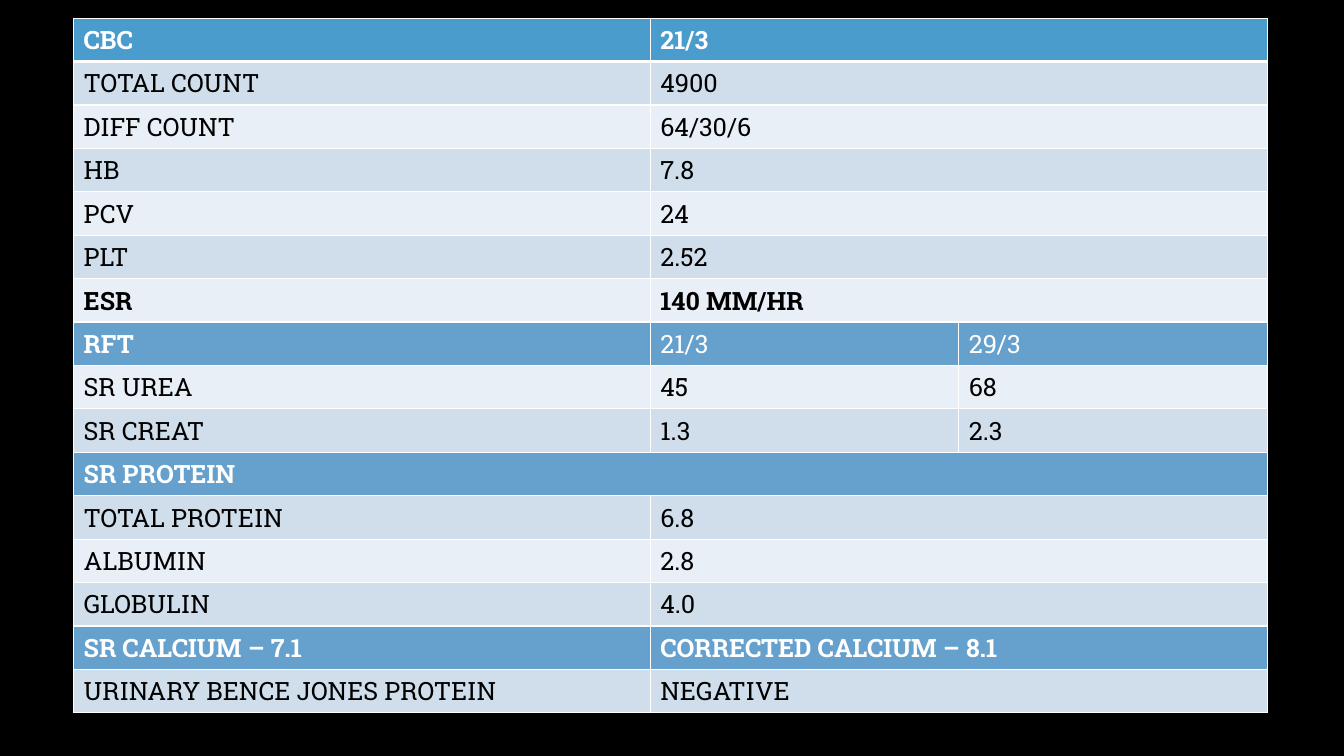
from pptx import Presentation
from pptx.dml.color import RGBColor as Rgb
from pptx.oxml.ns import qn
from pptx.util import Inches, Pt
from lxml.etree import SubElement as Sub

FONT = "Roboto Slab"
WHITE, BLACK = "FFFFFF", "000000"
TOP, HEAD = "4A9CCC", "65A1CC"
BANDS = ["E9EFF6", "D0DEEC"]

ROWS = [
    ("CBC", "21/3"),
    ("TOTAL COUNT", "4900"),
    ("DIFF COUNT", "64/30/6"),
    ("HB", "7.8"),
    ("PCV", "24"),
    ("PLT", "2.52"),
    ("ESR", "140 MM/HR"),
    ("RFT", "21/3", "29/3"),
    ("SR UREA", "45", "68"),
    ("SR CREAT", "1.3", "2.3"),
    ("SR PROTEIN",),
    ("TOTAL PROTEIN", "6.8"),
    ("ALBUMIN", "2.8"),
    ("GLOBULIN", "4.0"),
    ("SR CALCIUM – 7.1", "CORRECTED CALCIUM – 8.1"),
    ("URINARY BENCE JONES PROTEIN", "NEGATIVE"),
]
HEADS = {"CBC", "RFT", "SR PROTEIN", "SR CALCIUM – 7.1"}
BOLD = HEADS | {"ESR"}
LIGHT = {(7, 1), (7, 2)}
WIDTHS = [5.72, 3.06, 3.06]
LEFT, UP, HIGH = 0.73, 0.18, 0.43


def paint(fill, hue):
    fill.solid()
    fill.fore_color.rgb = Rgb.from_string(hue)


def edge(cell, row):
    wide = {"T": 3 if row == 1 else 1, "B": 3 if row == 0 else 1}
    props = cell._tc.get_or_add_tcPr()
    for side in "LRTB":
        line = Sub(props, qn(f"a:ln{side}"), w=str(Pt(wide.get(side, 1))))
        Sub(Sub(line, qn("a:solidFill")), qn("a:srgbClr"), val=WHITE)


def write(cell, text, hue, bold):
    cell.text_frame.text = text
    font = cell.text_frame.paragraphs[0].runs[0].font
    font.name, font.size, font.bold = FONT, Pt(18), bold
    font.color.rgb = Rgb.from_string(hue)


def main():
    deck = Presentation()
    deck.slide_width, deck.slide_height = Inches(13.33), Inches(7.5)
    slide = deck.slides.add_slide(deck.slide_layouts[6])
    paint(slide.background.fill, BLACK)

    frame = slide.shapes.add_table(
        len(ROWS), len(WIDTHS), Inches(LEFT), Inches(UP),
        Inches(sum(WIDTHS)), Inches(HIGH * len(ROWS)))
    grid = frame.table
    for col, width in zip(grid.columns, WIDTHS):
        col.width = Inches(width)

    last = len(WIDTHS) - 1
    for r, texts in enumerate(ROWS):
        grid.rows[r].height = Inches(HIGH)
        name = texts[0]
        head = name in HEADS
        back = TOP if r == 0 else HEAD if head else BANDS[r % 2]
        for c in range(last + 1):
            cell = grid.cell(r, c)
            edge(cell, r)
            paint(cell.fill, back)
        for c, text in enumerate(texts):
            bold = name in BOLD and (r, c) not in LIGHT
            write(grid.cell(r, c), text, WHITE if head else BLACK, bold)
        if len(texts) <= last:
            grid.cell(r, len(texts) - 1).merge(grid.cell(r, last))

    deck.save("out.pptx")


if __name__ == "__main__":
    main()
